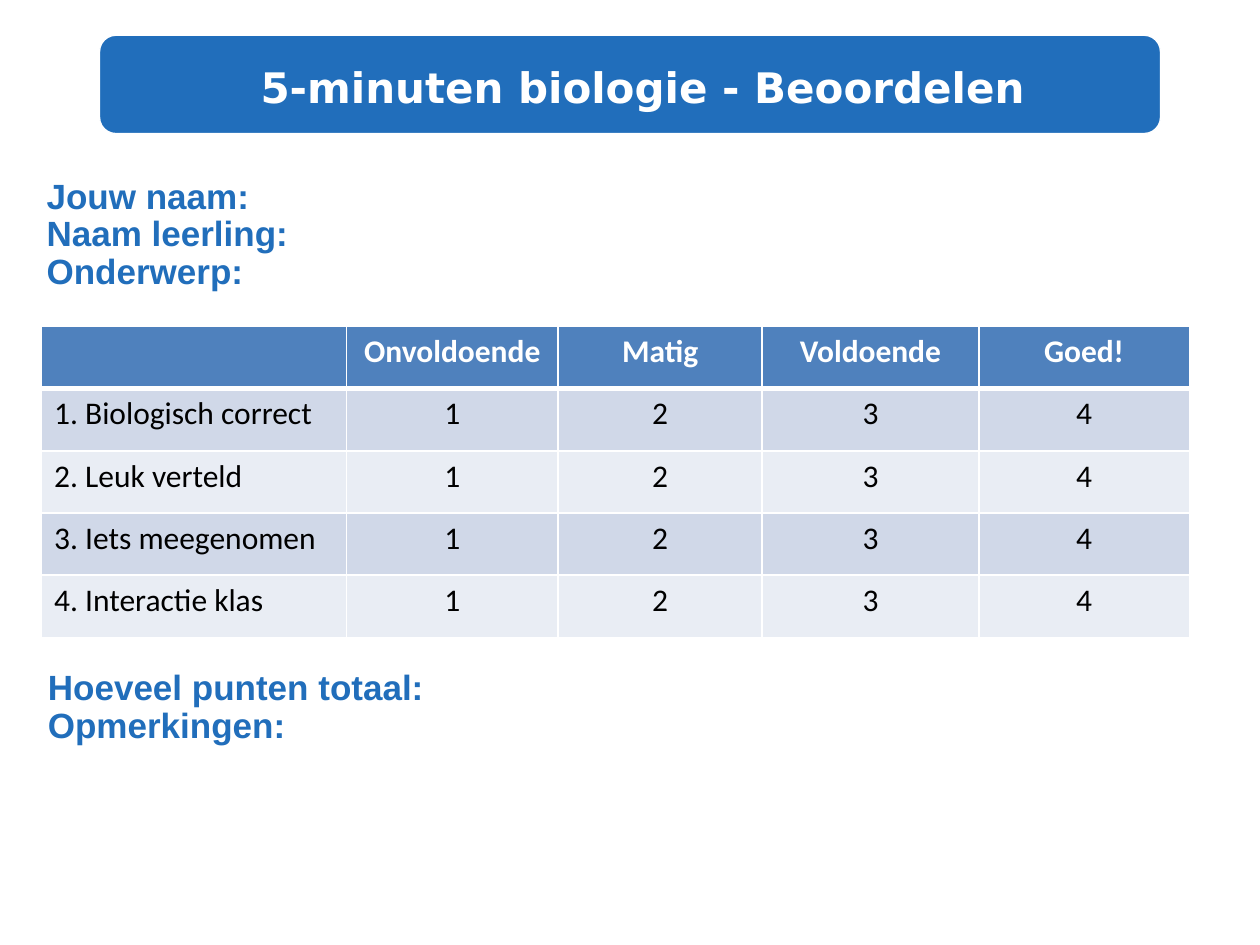
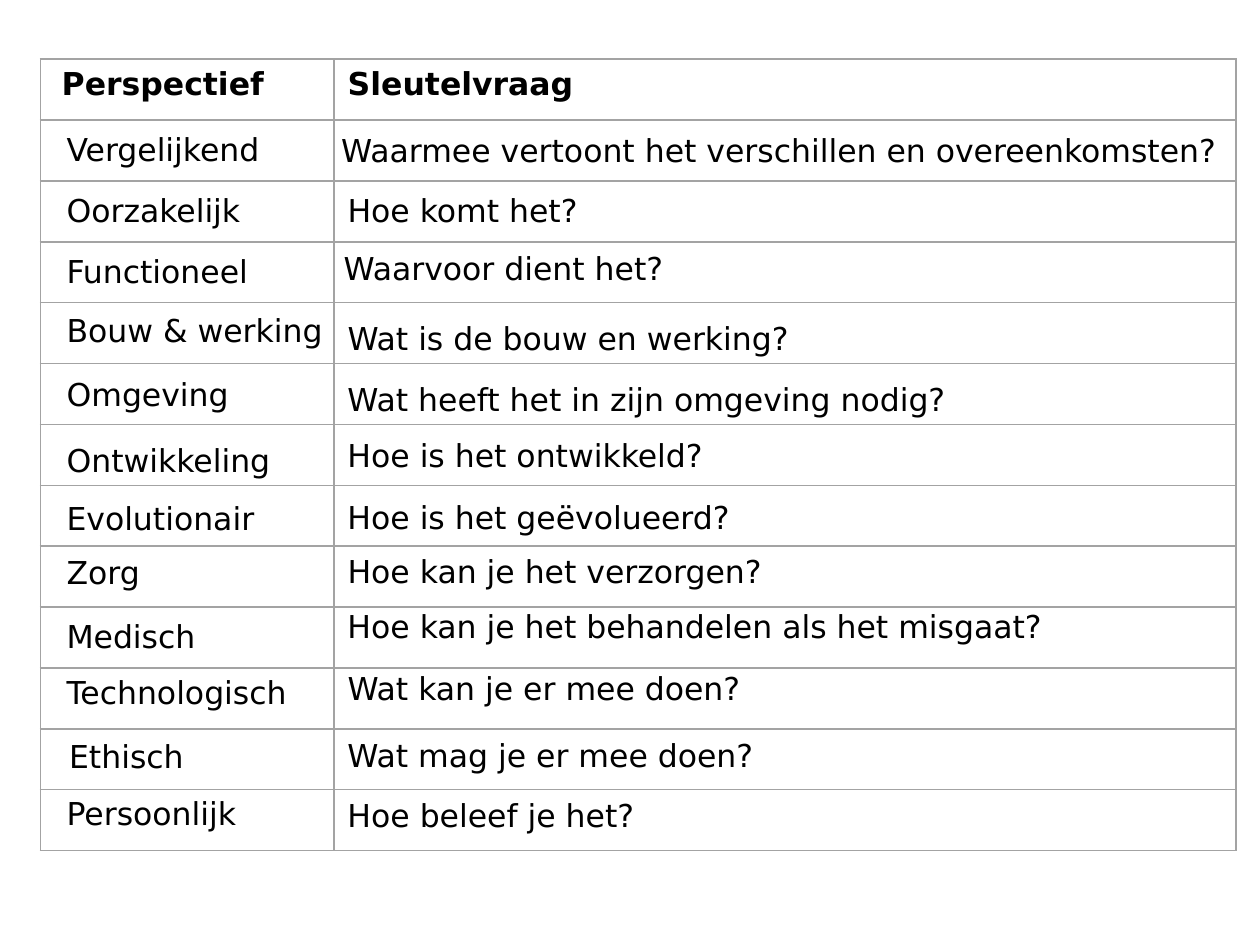
from dataclasses import dataclass

from lxml.etree import SubElement
from pptx import Presentation
from pptx.dml.color import RGBColor
from pptx.enum.shapes import MSO_SHAPE
from pptx.enum.text import MSO_ANCHOR, MSO_AUTO_SIZE, PP_ALIGN
from pptx.oxml.ns import qn
from pptx.util import Inches, Pt


@dataclass(frozen=True)
class Theme:
    blue: str = "216EBB"
    header: str = "4F81BD"
    bands: tuple = ("D0D8E8", "E9EDF4")
    white: str = "FFFFFF"
    black: str = "000000"
    grid: str = "A3A3A3"
    title_font: str = "DejaVu Sans"
    label_font: str = "Arial"
    table_font: str = "Calibri"
    title_size: int = 24
    label_size: int = 20
    text_size: int = 18


THEME = Theme()
TITLE_ONLY, BLANK = 5, 6

RATINGS = ["Onvoldoende", "Matig", "Voldoende", "Goed!"]
CRITERIA = ["Biologisch correct", "Leuk verteld", "Iets meegenomen", "Interactie klas"]

# Each entry: text, left, top, width
PERSPECTIVES = [
    ("Vergelijkend", 0.43, 0.98, 2.15),
    ("Oorzakelijk", 0.43, 1.47, 1.96),
    ("Functioneel", 0.43, 1.95, 2.0),
    ("Bouw & werking", 0.43, 2.42, 2.74),
    ("Omgeving", 0.43, 2.93, 1.81),
    ("Ontwikkeling", 0.43, 3.45, 2.23),
    ("Evolutionair", 0.43, 3.91, 2.06),
    ("Zorg", 0.43, 4.34, 0.95),
    ("Medisch", 0.43, 4.85, 1.47),
    ("Technologisch", 0.43, 5.29, 2.38),
    ("Ethisch", 0.45, 5.8, 1.35),
    ("Persoonlijk", 0.43, 6.25, 1.92),
]
KEY_QUESTIONS = [
    ("Waarmee vertoont het verschillen en overeenkomsten?", 2.61, 0.99, 7.35),
    ("Hoe komt het?", 2.66, 1.47, 2.62),
    ("Waarvoor dient het?", 2.63, 1.93, 3.47),
    ("Wat is de bouw en werking?", 2.66, 2.48, 4.79),
    ("Wat heeft het in zijn omgeving nodig?", 2.66, 2.97, 6.23),
    ("Hoe is het ontwikkeld?", 2.66, 3.41, 3.84),
    ("Hoe is het geëvolueerd?", 2.66, 3.9, 3.96),
    ("Hoe kan je het verzorgen?", 2.66, 4.33, 4.32),
    ("Hoe kan je het behandelen als het misgaat?", 2.66, 4.77, 7.04),
    ("Wat kan je er mee doen?", 2.66, 5.26, 4.12),
    ("Wat mag je er mee doen?", 2.66, 5.79, 4.24),
    ("Hoe beleef je het?", 2.66, 6.27, 3.17),
]


def set_attributes(target, values):
    for attribute, value in values.items():
        setattr(target, attribute, value)


def style_font(font, name, size, color, bold=False):
    set_attributes(font, {"name": name, "size": Pt(size), "bold": bold})
    font.color.rgb = RGBColor.from_string(color)


def paint(fill, color):
    fill.solid()
    fill.fore_color.rgb = RGBColor.from_string(color)


def add_title_banner(slide, text, left, top, width, height):
    bounds = [Inches(length) for length in (left, top, width, height)]
    banner = slide.shapes.add_shape(MSO_SHAPE.ROUNDED_RECTANGLE, *bounds)
    banner.shadow.inherit = False
    paint(banner.fill, THEME.blue)
    banner.line.color.rgb = RGBColor.from_string(THEME.white)
    banner.line.width = Pt(0.75)

    title = slide.shapes.title
    set_attributes(title, dict(zip(("left", "top", "width", "height"), bounds)))
    slide.shapes.element.append(title.element)  # bring in front of the banner
    frame = title.text_frame
    frame.text = text
    set_attributes(frame, {
        "margin_left": Inches(0.25), "margin_right": Inches(0.05),
        "margin_top": Inches(0.05), "margin_bottom": Inches(0.05),
        "vertical_anchor": MSO_ANCHOR.MIDDLE, "auto_size": MSO_AUTO_SIZE.NONE,
    })
    paragraph = frame.paragraphs[0]
    set_attributes(paragraph, {"alignment": PP_ALIGN.CENTER, "line_spacing": 1.1})
    style_font(paragraph.font, THEME.title_font, THEME.title_size, THEME.white, True)


def add_text(slide, lines, left, top, width, height):
    """Add a wrapping text box and return its text frame."""
    box = slide.shapes.add_textbox(Inches(left), Inches(top), Inches(width), Inches(height))
    frame = box.text_frame
    frame.text = "\n".join(lines)
    set_attributes(frame, {"word_wrap": True, "auto_size": MSO_AUTO_SIZE.SHAPE_TO_FIT_TEXT})
    return frame


def add_form_labels(slide, labels, left, top, width, height):
    frame = add_text(slide, labels, left, top, width, height)
    frame.margin_left = Inches(0.6)
    for paragraph in frame.paragraphs:
        paragraph.line_spacing = 0.9
        style_font(paragraph.font, THEME.label_font, THEME.label_size, THEME.blue, True)


def add_caption(slide, text, left, top, width):
    frame = add_text(slide, [text], left, top, width, 0.4)
    style_font(frame.paragraphs[0].font, THEME.title_font, THEME.text_size, THEME.black)


def set_borders(cell, color, **widths):
    """Draw all four sides 1 pt wide, unless a side such as B=3 is given."""
    properties = cell._tc.get_or_add_tcPr()
    for side in "LRTB":
        line = SubElement(properties, qn(f"a:ln{side}"), w=str(Pt(widths.get(side, 1))))
        SubElement(SubElement(line, qn("a:solidFill")), qn("a:srgbClr"), val=color)


def add_grid(slide, left, top, column_widths, row_count, height):
    table = slide.shapes.add_table(
        row_count, len(column_widths), Inches(left), Inches(top),
        Inches(sum(column_widths)), Inches(height)).table
    for column, width in zip(table.columns, column_widths):
        column.width = Inches(width)
    return table


def write_cell(cell, text, font, color, bold=False, alignment=PP_ALIGN.LEFT):
    cell.text = text
    paragraph = cell.text_frame.paragraphs[0]
    paragraph.alignment = alignment
    style_font(paragraph.font, font, THEME.text_size, color, bold)


def add_rating_table(slide):
    rows = [["", *RATINGS]]
    for number, criterion in enumerate(CRITERIA, 1):
        scores = [str(score) for score in range(1, len(RATINGS) + 1)]
        rows.append([f"{number}. {criterion}", *scores])
    table = add_grid(slide, 0.33, 2.59, [2.42, 1.68, 1.62, 1.72, 1.67], len(rows), 2.47)
    for row, texts in enumerate(rows):
        is_header = row == 0
        for column, text in enumerate(texts):
            cell = table.cell(row, column)
            write_cell(cell, text, THEME.table_font,
                       THEME.white if is_header else THEME.black, is_header,
                       PP_ALIGN.CENTER if column else PP_ALIGN.LEFT)
            set_borders(cell, THEME.white, **({"B": 3} if is_header else {"T": 3} if row == 1 else {}))
            paint(cell.fill, THEME.header if is_header else THEME.bands[(row - 1) % 2])


def add_perspective_grid(slide):
    table = add_grid(slide, 0.32, 0.47, [2.33, 7.16], len(PERSPECTIVES) + 1, 6.28)
    set_attributes(table, {"first_row": False, "horz_banding": False})
    for cell in table.iter_cells():
        set_borders(cell, THEME.grid)
        cell.fill.background()
    headings = [("Perspectief", 0.17), ("Sleutelvraag", 0.11)]
    for column, (heading, indent) in enumerate(headings):
        cell = table.cell(0, column)
        write_cell(cell, heading, THEME.title_font, THEME.black, True)
        set_attributes(cell, {"margin_left": Inches(indent), "margin_top": Inches(0.06)})


def build_assessment(deck):
    slide = deck.slides.add_slide(deck.slide_layouts[TITLE_ONLY])
    add_title_banner(slide, "5-minuten biologie - Beoordelen", 0.79, 0.28, 8.42, 0.78)
    add_form_labels(slide, ["Jouw naam:", "Naam leerling:", "Onderwerp:"],
                    -0.23, 1.37, 10, 1.01)
    add_rating_table(slide)
    add_form_labels(slide, ["Hoeveel punten totaal:", "Opmerkingen:"],
                    -0.22, 5.27, 5.11, 0.71)


def build_perspectives(deck):
    slide = deck.slides.add_slide(deck.slide_layouts[BLANK])
    add_perspective_grid(slide)
    for perspective, question in zip(PERSPECTIVES, KEY_QUESTIONS):
        add_caption(slide, *perspective)
        add_caption(slide, *question)


def main():
    deck = Presentation()
    set_attributes(deck, {"slide_width": Inches(10), "slide_height": Inches(7.5)})
    build_assessment(deck)
    build_perspectives(deck)
    deck.save("out.pptx")


if __name__ == "__main__":
    main()
